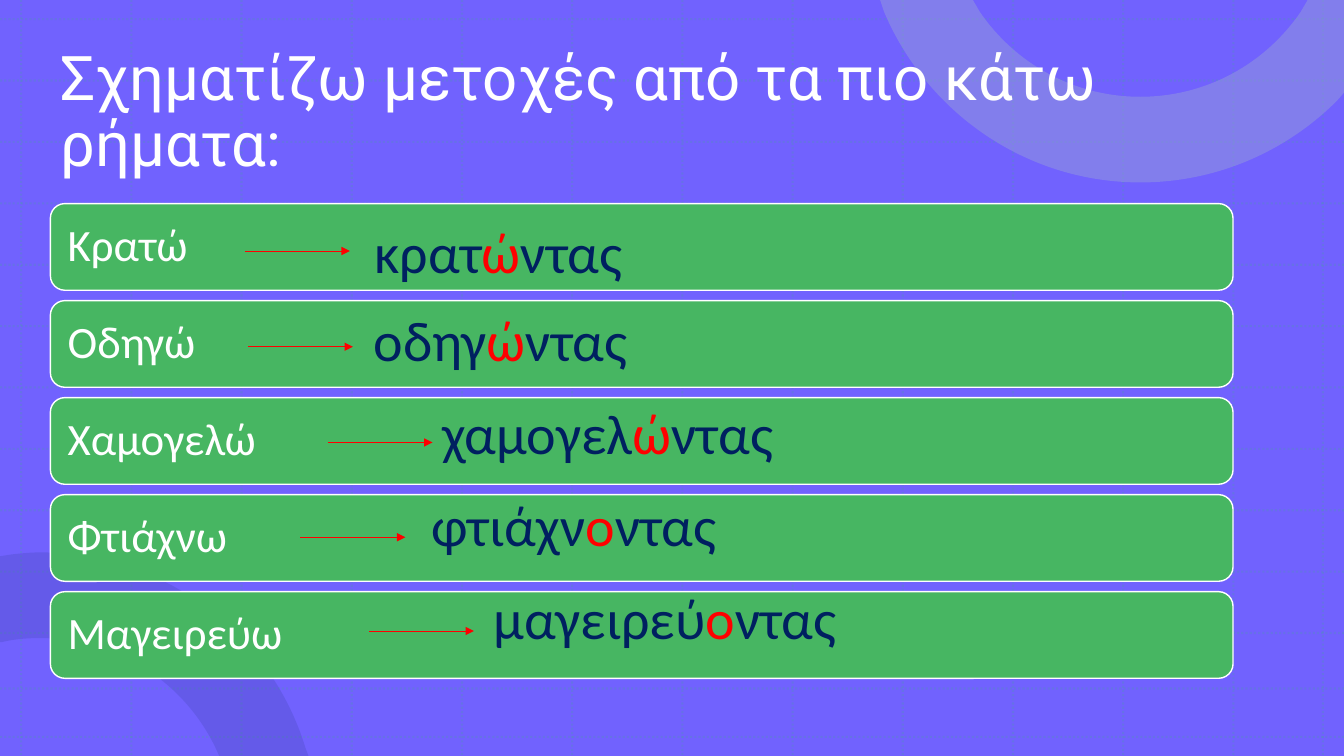
from lxml import etree
from pptx import Presentation
from pptx.dml.color import RGBColor
from pptx.enum.dml import MSO_LINE
from pptx.enum.shapes import MSO_CONNECTOR, MSO_SHAPE
from pptx.enum.text import MSO_ANCHOR, MSO_AUTO_SIZE, PP_ALIGN
from pptx.oxml.ns import qn
from pptx.util import Inches, Pt

STRAIGHT = MSO_CONNECTOR.STRAIGHT
RECT, ROUND = MSO_SHAPE.RECTANGLE, MSO_SHAPE.ROUNDED_RECTANGLE
DOTS = MSO_LINE.ROUND_DOT
MIDDLE, TOP = MSO_ANCHOR.MIDDLE, MSO_ANCHOR.TOP
LEFT = PP_ALIGN.LEFT
FIXED = MSO_AUTO_SIZE.NONE

TITLE = "Σχηματίζω μετοχές από τα πιο κάτω ρήματα:"
# verb, (stem, stressed vowel, ending), arrow (x, y), answer (x, y, width)
VERBS = [
    ("Κρατώ", ("κρατ", "ώ", "ντας"), (2.43, 2.49), (3.62, 2.11, 2.96)),
    ("Οδηγώ", ("οδηγ", "ώ", "ντας"), (2.46, 3.44), (3.61, 2.98, 2.96)),
    ("Χαμογελώ", ("χαμογελ", "ώ", "ντας"), (3.25, 4.39), (4.29, 3.9, 3.55)),
    ("Φτιάχνω", ("φτιάχν", "ο", "ντας"), (2.98, 5.33), (4.18, 4.82, 3.55)),
    ("Μαγειρεύω", ("μαγειρεύ", "ο", "ντας"), (3.66, 6.26), (4.8, 5.74, 3.83)),
]
# Ring outlines: two numbers are a point, six are a curve to the last point
LOW_RING = [
    (0.4, 5.48), (1.64, 5.48, 2.69, 6.3, 3.03, 7.42), (3.06, 7.5),
    (2.17, 7.5), (2.17, 7.49), (1.88, 6.81, 1.2, 6.33, 0.4, 6.33),
    (0.27, 6.33, 0.14, 6.34, 0.02, 6.37), (-0.01, 6.37), (-0.01, 5.52),
    (0.12, 5.5), (0.21, 5.49, 0.31, 5.48, 0.4, 5.48),
]
HIGH_RING = [
    (8.73, 0), (9.65, 0), (9.72, 0.12),
    (10.07, 0.63, 10.65, 0.96, 11.31, 0.96),
    (11.97, 0.96, 12.55, 0.63, 12.9, 0.12), (12.97, 0), (13.33, 0),
    (13.33, 0.92), (13.26, 1), (12.76, 1.5, 12.07, 1.81, 11.31, 1.81),
    (10.17, 1.81, 9.19, 1.11, 8.77, 0.12),
]


class Theme:
    back, grid = "7162FE", "3BB189"
    dark, pale = "333D99", "949BDB"
    bar, white = "47B662", "FFFFFF"
    navy, red = "002060", "FF0000"
    head, text = "Roboto", "Calibri"
    title, verb, answer = 44, 32, 40


WIDE, HIGH = 13.33, 7.5
COLS = [13.12] + [0.21 + 1.093 * i for i in range(12)]
ROWS = [0.19 + 0.609 * i for i in range(11)] + [6.83, 7.31]
EDGE, SPAN = 0.5, 11.73
BAR_TOP, BAR_HIGH, PITCH = 2.02, 0.86, 0.9625
ARROW = 1.04


def rgb(code):
    return RGBColor.from_string(code)


def paint(shape, color):
    shape.shadow.inherit = False
    shape.fill.solid()
    shape.fill.fore_color.rgb = rgb(color)
    shape.line.fill.background()


def fade(part, share):
    """Set the opacity, in percent, of the colour inside an XML part."""
    for color in part.iter(qn("a:srgbClr")):
        etree.SubElement(color, qn("a:alpha")).set("val", str(share * 1000))


def add_line(shapes, start, end, color, width):
    line = shapes.add_connector(STRAIGHT, *(Inches(n) for n in start + end))
    line.line.color.rgb = rgb(color)
    line.line.width = Pt(width)
    etree.SubElement(line._element.spPr, qn("a:effectLst"))
    return line


def add_grid(shapes):
    ends = [((x, 0), (x, HIGH)) for x in COLS]
    ends += [((0, y), (WIDE, y)) for y in ROWS]
    for start, end in ends:
        line = add_line(shapes, start, end, Theme.grid, 1.5)
        line.line.dash_style = DOTS
        fade(line.line._get_or_add_ln(), 20)


def add_ring(shapes, outline, color, share):
    """Build the outline with straight sides, then bend its curves."""
    first, *steps = [[Inches(n) for n in step] for step in outline]
    form = shapes.build_freeform(*first)
    form.add_line_segments([step[-2:] for step in steps])
    ring = form.convert_to_shape()
    sides = list(ring._element.iter(qn("a:lnTo")))
    for side, step in zip(sides, steps):
        if len(step) == 2:
            continue
        side.tag = qn("a:cubicBezTo")
        for i in (0, 2):
            point = etree.Element(qn("a:pt"))
            point.set("x", str(step[i] - ring.left))
            point.set("y", str(step[i + 1] - ring.top))
            side.insert(i // 2, point)
    paint(ring, color)
    fade(ring._element.spPr, share)


def add_scene(slide, master):
    """Draw the backdrop and hand its shapes to the slide master."""
    shapes = slide.shapes
    held = len(shapes)
    back = shapes.add_shape(RECT, 0, 0, Inches(WIDE), Inches(HIGH))
    paint(back, Theme.back)
    add_grid(shapes)
    add_ring(shapes, LOW_RING, Theme.dark, 20)
    add_ring(shapes, HIGH_RING, Theme.pale, 50)
    for shape in list(shapes)[held:]:
        master.shapes._spTree.append(shape._element)


def write(frame, runs, font, size, anchor, spacing=None):
    frame.word_wrap = True
    frame.auto_size = FIXED
    frame.vertical_anchor = anchor
    para = frame.paragraphs[0]
    para.alignment = LEFT
    if spacing:
        para.line_spacing = spacing
    for text, color in runs:
        run = para.add_run()
        run.text = text
        run.font.name = font
        run.font.size = Pt(size)
        run.font.color.rgb = rgb(color)


def add_title(title):
    title.left, title.top = Inches(EDGE), Inches(0.4)
    title.width, title.height = Inches(SPAN), Inches(1.45)
    write(title.text_frame, [(TITLE, Theme.white)], Theme.head,
          Theme.title, MIDDLE, 0.9)


def add_bar(shapes, top, verb):
    bar = shapes.add_shape(ROUND, Inches(EDGE), Inches(top),
                           Inches(SPAN), Inches(BAR_HIGH))
    paint(bar, Theme.bar)
    bar.line.color.rgb = rgb(Theme.white)
    bar.line.width = Pt(1)
    frame = bar.text_frame
    frame.margin_left = frame.margin_right = Inches(0.13)
    write(frame, [(verb, Theme.white)], Theme.text, Theme.verb, MIDDLE, 0.9)


def add_answer(shapes, parts, start, place):
    x, y = start
    arrow = add_line(shapes, start, (x + ARROW, y), Theme.red, 0.5)
    tail = etree.SubElement(arrow.line._get_or_add_ln(), qn("a:tailEnd"))
    tail.set("type", "triangle")
    left, top, width = place
    box = shapes.add_textbox(Inches(left), Inches(top),
                             Inches(width), Inches(0.77))
    colors = (Theme.navy, Theme.red, Theme.navy)
    write(box.text_frame, zip(parts, colors), Theme.text, Theme.answer, TOP)


def main():
    deck = Presentation()
    deck.slide_width, deck.slide_height = Inches(WIDE), Inches(HIGH)
    slide = deck.slides.add_slide(deck.slide_layouts[5])
    shapes = slide.shapes
    add_scene(slide, deck.slide_master)
    add_title(shapes.title)
    for i, (verb, *_) in enumerate(VERBS):
        add_bar(shapes, BAR_TOP + i * PITCH, verb)
    for _, parts, start, place in VERBS:
        add_answer(shapes, parts, start, place)
    deck.save("out.pptx")


if __name__ == "__main__":
    main()
